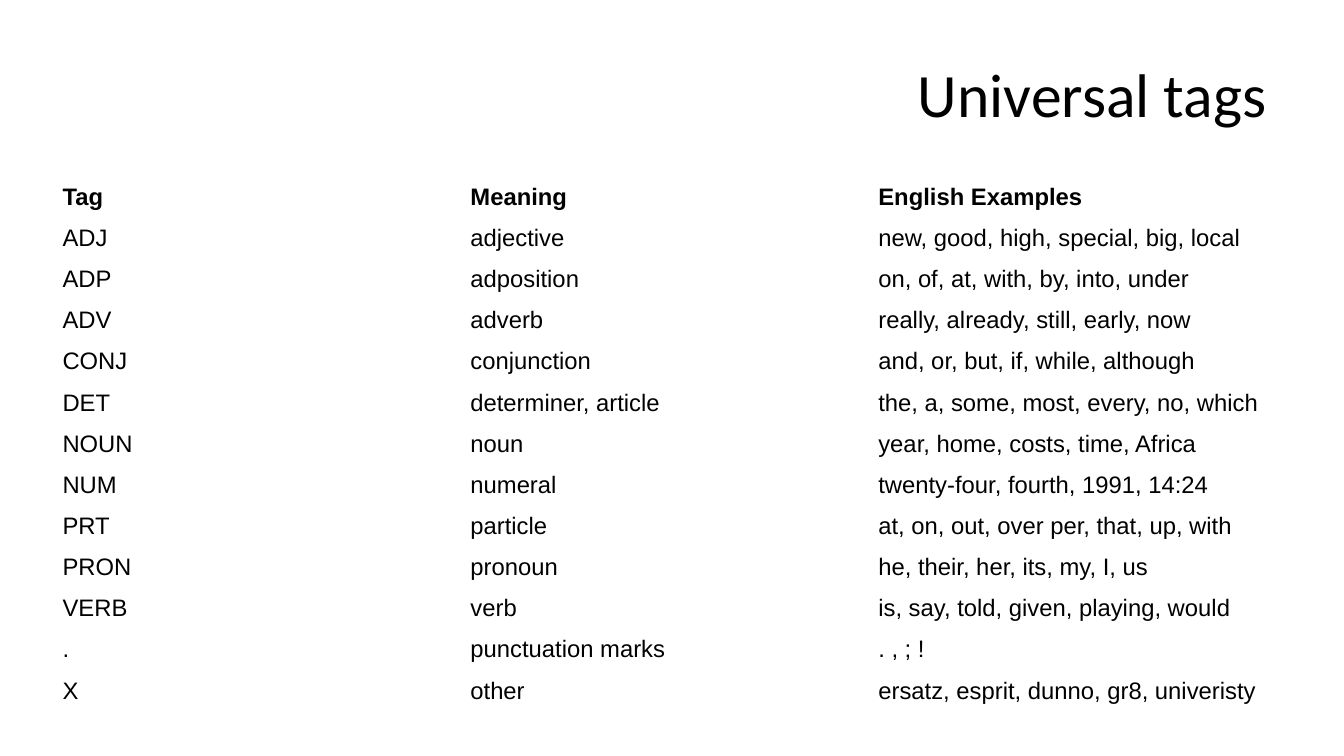
from typing import Any, NamedTuple

from pptx import Presentation
from pptx.dml.color import RGBColor
from pptx.enum.text import MSO_ANCHOR, PP_ALIGN
from pptx.util import Pt

MIDDLE = MSO_ANCHOR.MIDDLE
LEFT, RIGHT = PP_ALIGN.LEFT, PP_ALIGN.RIGHT
BLACK = RGBColor(0x00, 0x00, 0x00)
TITLE_ONLY = 5


class TagRow(NamedTuple):
    tag: str
    meaning: str
    examples: str


TAG_ROWS = [
    TagRow("Tag", "Meaning", "English Examples"),
    TagRow("ADJ", "adjective", "new, good, high, special, big, local"),
    TagRow("ADP", "adposition", "on, of, at, with, by, into, under"),
    TagRow("ADV", "adverb", "really, already, still, early, now"),
    TagRow("CONJ", "conjunction", "and, or, but, if, while, although"),
    TagRow("DET", "determiner, article", "the, a, some, most, every, no, which"),
    TagRow("NOUN", "noun", "year, home, costs, time, Africa"),
    TagRow("NUM", "numeral", "twenty-four, fourth, 1991, 14:24"),
    TagRow("PRT", "particle", "at, on, out, over per, that, up, with"),
    TagRow("PRON", "pronoun", "he, their, her, its, my, I, us"),
    TagRow("VERB", "verb", "is, say, told, given, playing, would"),
    TagRow(".", "punctuation marks", ". , ; !"),
    TagRow("X", "other", "ersatz, esprit, dunno, gr8, univeristy"),
]

TITLE_PLACE = {"left": Pt(48), "top": Pt(21.6), "width": Pt(864), "height": Pt(90)}
TITLE_FONT = {"name": "Calibri", "size": Pt(44), "bold": False}
CELL_FONT = {"name": "Arial", "size": Pt(17)}
CELL_FORMAT = {
    "vertical_anchor": MIDDLE,
    "margin_left": Pt(7.2),
    "margin_right": Pt(7.2),
    "margin_top": Pt(3.6),
    "margin_bottom": Pt(3.6),
}
TABLE_LEFT, TABLE_TOP = Pt(37.44), Pt(126)
COLUMN_WIDTH, ROW_HEIGHT = Pt(291.4), Pt(29.4)


def apply_format(target: Any, values: dict[str, Any]) -> None:
    for name, value in values.items():
        setattr(target, name, value)


def write_text(box: Any, text: str, align: Any, font: dict[str, Any]) -> None:
    para = box.text_frame.paragraphs[0]
    para.alignment = align
    span = para.add_run()
    span.text = text
    apply_format(span.font, font)
    span.font.color.rgb = BLACK


def add_title(page: Any, text: str) -> None:
    title = page.shapes.title
    apply_format(title, TITLE_PLACE)
    title.text_frame.vertical_anchor = MIDDLE
    write_text(title, text, RIGHT, TITLE_FONT)


def add_tag_table(page: Any, rows: list[TagRow]) -> None:
    column_count = len(rows[0])
    table = page.shapes.add_table(
        len(rows), column_count, TABLE_LEFT, TABLE_TOP,
        COLUMN_WIDTH * column_count, ROW_HEIGHT * len(rows),
    ).table
    apply_format(table, {"first_row": False, "horz_banding": False})
    for row_index, row in enumerate(rows):
        for column_index, text in enumerate(row):
            cell = table.cell(row_index, column_index)
            cell.fill.background()
            apply_format(cell, CELL_FORMAT)
            write_text(cell, text, LEFT, CELL_FONT | {"bold": row_index == 0})


def main() -> None:
    deck = Presentation()
    deck.slide_width, deck.slide_height = Pt(960), Pt(540)
    page = deck.slides.add_slide(deck.slide_layouts[TITLE_ONLY])

    # Heading
    add_title(page, "Universal tags")

    # Table of tags
    add_tag_table(page, TAG_ROWS)

    deck.save("out.pptx")


if __name__ == "__main__":
    main()
